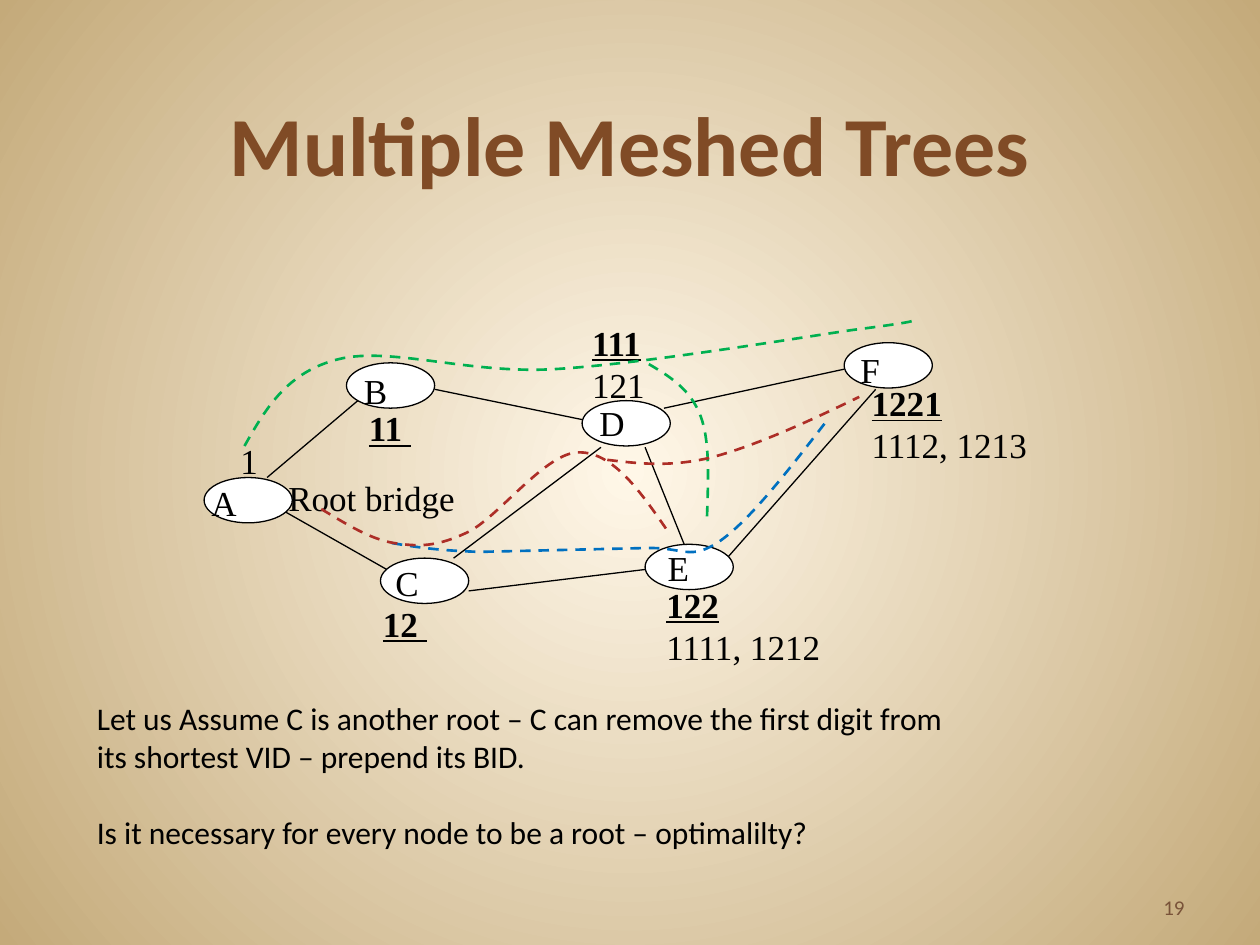
from lxml import etree
from pptx import Presentation
from pptx.dml.color import RGBColor
from pptx.enum.dml import MSO_LINE
from pptx.enum.shapes import MSO_CONNECTOR, MSO_SHAPE
from pptx.enum.text import MSO_ANCHOR, PP_ALIGN
from pptx.oxml import parse_xml
from pptx.oxml.ns import nsdecls, qn
from pptx.util import Inches, Pt

STRAIGHT, OVAL, DASH = MSO_CONNECTOR.STRAIGHT, MSO_SHAPE.OVAL, MSO_LINE.DASH
TOP, BOTTOM = MSO_ANCHOR.TOP, MSO_ANCHOR.BOTTOM
LEFT, CENTER, RIGHT = PP_ALIGN.LEFT, PP_ALIGN.CENTER, PP_ALIGN.RIGHT
SANS, SERIF = "Calibri", "Times New Roman"
BLACK, WHITE, GREEN, BLUE, RED = "000000", "FFFFFF", "00B050", "0070C0", "AD2E27"

# Content (inches)
TITLE = "Multiple Meshed Trees"
NOTES = ["Let us Assume C is another root – C can remove the first digit from "
         "its shortest VID – prepend its BID.",
         "Is it necessary for every node to be a root – optimalilty?"]

NODE_W, NODE_H = 0.7, 0.36
NODES = {  # name: node corner, letter corner
    "A": ((1.62, 3.79), (1.58, 3.77)),
    "B": ((2.75, 2.88), (2.79, 2.88)),
    "F": ((6.7, 2.72), (6.73, 2.72)),
    "E": ((5.12, 4.32), (5.2, 4.29)),
    "C": ((3.02, 4.43), (3.04, 4.41)),
    "D": ((4.62, 3.18), (4.66, 3.14)),
}
LINKS = [  # from, to
    ((2.12, 3.79), (2.84, 3.18)),  # A-B
    ((2.26, 4.06), (3.07, 4.52)),  # A-C
    ((3.6, 4.43), (4.77, 3.55)),   # C-D
    ((3.45, 3.09), (4.62, 3.33)),  # B-D
    ((3.72, 4.69), (5.12, 4.52)),  # C-E
    ((5.12, 3.55), (5.43, 4.32)),  # D-E
    ((5.27, 3.24), (6.7, 2.93)),   # D-F
    ((5.77, 4.43), (6.95, 3.09)),  # E-F
]
LABELS = [  # box, primary VID (bold), other text
    ((2.19, 3.73, 1.8, 0.46), None, "Root bridge"),
    ((1.81, 3.44, 0.73, 0.46), None, "1"),
    ((2.83, 3.18, 0.72, 0.46), "11 ", None),
    ((2.94, 4.73, 0.73, 0.46), "12 ", None),
    ((4.6, 2.5, 0.92, 0.74), "111", "121"),
    ((5.19, 4.58, 1.77, 0.91), "122", "1111, 1212"),
    ((6.82, 2.98, 1.64, 0.74), "1221", "1112, 1213"),
]
TREES = [  # colour, start, then Bezier pieces (two controls and an end) or straight ends
    (GREEN, (1.94, 3.54), [
        ((2.11, 3.24), (2.28, 2.95), (2.69, 2.85)),
        ((3.1, 2.75), (3.72, 2.97), (4.4, 2.93)),
        ((5.08, 2.89), (6.28, 2.69), (6.76, 2.62)),
        ((7.23, 2.56), (7.24, 2.55), (7.26, 2.54))]),
    (GREEN, (5.15, 2.89), [
        ((5.32, 2.99), (5.48, 3.09), (5.56, 3.3)),
        ((5.64, 3.51), (5.62, 3.83), (5.61, 4.16))]),
    (BLUE, (3.11, 4.31), [
        ((3.29, 4.34), (3.47, 4.37), (3.81, 4.38)),
        ((5.12, 4.35),),
        ((5.44, 4.34), (5.47, 4.46), (5.72, 4.29)),
        ((5.96, 4.12), (6.26, 3.73), (6.57, 3.33))]),
    (RED, (2.55, 4.04), [
        ((2.75, 4.16), (2.94, 4.28), (3.13, 4.31)),
        ((3.33, 4.34), (3.47, 4.34), (3.72, 4.22)),
        ((3.96, 4.1), (4.34, 3.58), (4.6, 3.59)),
        ((4.87, 3.59), (5.09, 3.91), (5.31, 4.23))]),
    (RED, (4.82, 3.65), [
        ((5.07, 3.68), (5.32, 3.71), (5.65, 3.63)),
        ((5.99, 3.54), (6.41, 3.35), (6.82, 3.15))]),
]

prs = Presentation()
prs.slide_width, prs.slide_height = Inches(10), Inches(7.5)
s = prs.slides.add_slide(prs.slide_layouts[6])


def rgb(hex_colour):
    return RGBColor.from_string(hex_colour)


def add_text(box, lines, size=20, font=SERIF, colour=BLACK, align=LEFT,
             anchor=TOP, gap=0):
    """Each line is a pair: text, style ("b" bold, "u" underlined)."""
    tf = s.shapes.add_textbox(*map(Inches, box)).text_frame
    tf.word_wrap = True
    tf.vertical_anchor = anchor
    for i, (text, style) in enumerate(lines):
        p = tf.paragraphs[0] if i == 0 else tf.add_paragraph()
        p.text = text
        p.alignment = align
        p.space_before = Pt(gap if i else 0)
        p.font.size, p.font.name = Pt(size), font
        p.font.bold, p.font.underline = "b" in style, "u" in style
        p.font.color.rgb = rgb(colour)


def set_line(sp, colour, width):
    sp.line.color.rgb = rgb(colour)
    sp.line.width = Pt(width)


def add_curve(start, pieces):
    """Freeform through the piece ends, its segments bent by their controls."""
    builder = s.shapes.build_freeform(*map(Inches, start))
    builder.add_line_segments([tuple(map(Inches, piece[-1])) for piece in pieces],
                              close=False)
    sp = builder.convert_to_shape()
    segments = list(sp._element.iter(qn("a:lnTo")))
    for segment, piece in zip(segments, pieces):
        if len(piece) == 3:
            curve = etree.Element(qn("a:cubicBezTo"))
            for x, y in piece:
                etree.SubElement(curve, qn("a:pt"), x=str(Inches(x) - sp.left),
                                 y=str(Inches(y) - sp.top))
            segment.getparent().replace(segment, curve)
    return sp


# Radial background
fill = s.background.fill
fill.gradient()
for stop, colour, position in zip(fill.gradient_stops, ("FFF7E8", "C4AA7A"), (0, 1)):
    stop.color.rgb, stop.position = rgb(colour), position
lin = s.background._cSld.find(".//" + qn("a:lin"))
lin.getparent().replace(lin, parse_xml(
    f'<a:path {nsdecls("a")} path="circle">'
    '<a:fillToRect l="50000" t="50000" r="50000" b="50000"/></a:path>'))

# Title and slide number
add_text((0.5, 0.33, 9, 1.25), [(TITLE, "b")], 48, SANS, "804B26", CENTER, BOTTOM)
add_text((7.17, 6.83, 2.33, 0.52), [("19", "")], 12, SANS, "795339", RIGHT, BOTTOM)

# Links between nodes
for start, end in LINKS:
    link = s.shapes.add_connector(STRAIGHT, *map(Inches, start + end))
    set_line(link, BLACK, 0.75)
    etree.SubElement(link._element.spPr, qn("a:effectLst"))

# VID labels
for box, primary, other in LABELS:
    add_text(box, [(text, style) for text, style in ((primary, "bu"), (other, "")) if text])

# Nodes
for name, (corner, letter) in NODES.items():
    sp = s.shapes.add_shape(OVAL, *map(Inches, corner + (NODE_W, NODE_H)))
    sp.shadow.inherit = False
    sp.fill.solid()
    sp.fill.fore_color.rgb = rgb(WHITE)
    set_line(sp, BLACK, 0.75)
    add_text(letter + (0.5, 0.53), [(name, "")])

# Dashed tree paths
for colour, start, pieces in TREES:
    sp = add_curve(start, pieces)
    sp.shadow.inherit = False
    sp.fill.background()
    set_line(sp, colour, 1.5)
    sp.line.dash_style = DASH

# Closing notes, one line apart
add_text((0.67, 5.5, 6.92, 1.31), [(text, "") for text in NOTES], 18, SANS, gap=22)

prs.save("out.pptx")
